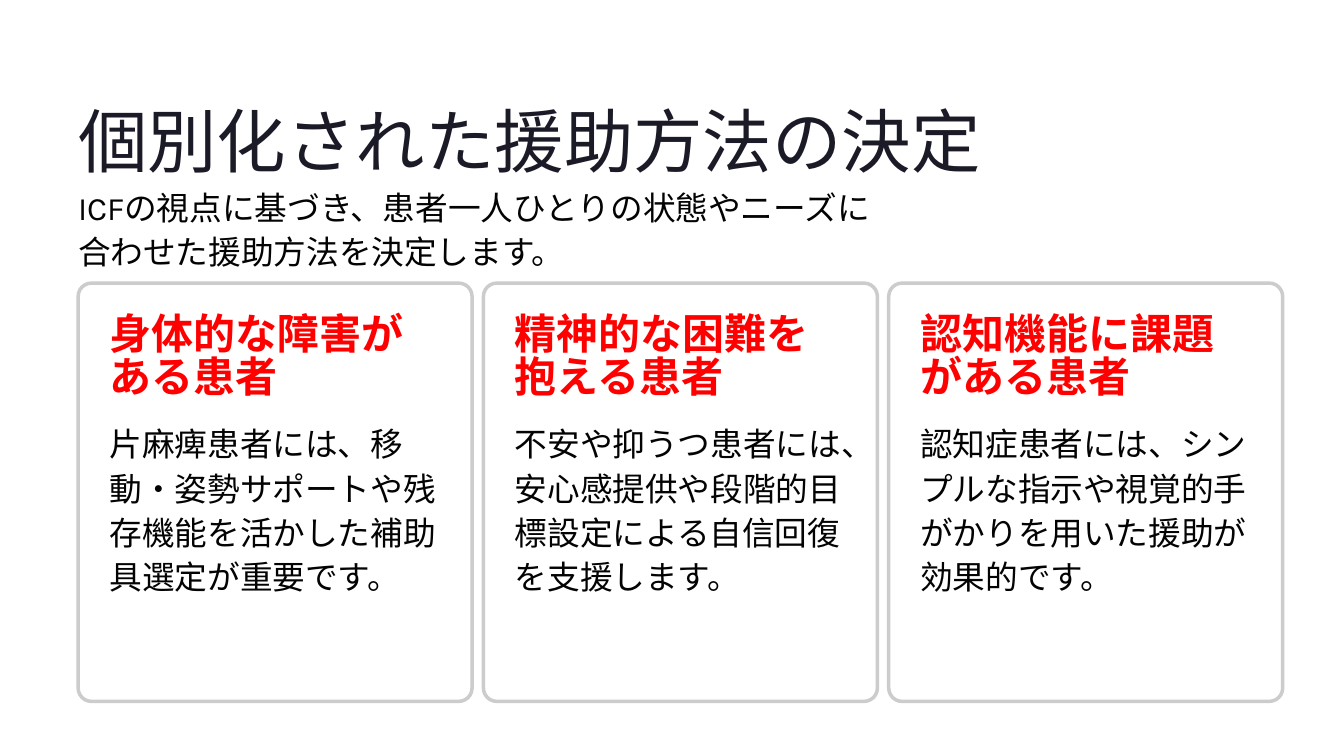
from pptx import Presentation
from pptx.dml.color import RGBColor
from pptx.enum.shapes import MSO_SHAPE
from pptx.enum.text import MSO_ANCHOR, MSO_AUTO_SIZE, PP_ALIGN
from pptx.oxml.ns import qn
from pptx.util import Inches, Pt
from lxml.etree import SubElement

TITLE = "個別化された援助方法の決定"
INTRO = ["ICFの視点に基づき、患者一人ひとりの状態やニーズに",
         "合わせた援助方法を決定します。"]
CARDS = [
    ("身体的な障害がある患者",
     "片麻痺患者には、移動・姿勢サポートや残存機能を活かした補助具選定が重要です。"),
    ("精神的な困難を抱える患者",
     "不安や抑うつ患者には、安心感提供や段階的目標設定による自信回復を支援します。"),
    ("認知機能に課題がある患者",
     "認知症患者には、シンプルな指示や視覚的手がかりを用いた援助が効果的です。"),
]

MARGIN = 0.93
CARD_TOP, CARD_WIDTH, CARD_HEIGHT = 3.37, 4.69, 4.98
COLUMN_STEP = 4.825
PADDING = 0.375
TEXT_WIDTH = 3.9
BODY_STYLE = dict(size=28, spacing=38, font="Karla", color="030303")
HEADING_STYLE = dict(size=36, spacing=37, font="Inter", color="FF0000", bold=True)


def rgb(value):
    return RGBColor.from_string(value)


def place(shape, left, top, width, height):
    shape.left, shape.top = Inches(left), Inches(top)
    shape.width, shape.height = Inches(width), Inches(height)


def write(shape, lines, size, spacing, font, color, bold=False, wrap=True):
    frame = shape.text_frame
    frame.margin_left = frame.margin_right = frame.margin_top = frame.margin_bottom = 0
    frame.auto_size = MSO_AUTO_SIZE.NONE
    frame.vertical_anchor = MSO_ANCHOR.TOP
    frame.word_wrap = wrap
    frame.text = "\n".join(lines)
    for paragraph in frame.paragraphs:
        paragraph.alignment = PP_ALIGN.LEFT
        paragraph.line_spacing = Pt(spacing)
        run_font = paragraph.runs[0].font
        run_font.name, run_font.size, run_font.bold = font, Pt(size), bold
        run_font.color.rgb = rgb(color)


def add_text(slide, box, lines, **style):
    write(slide.shapes.add_textbox(*map(Inches, box)), lines, **style)


def add_card(slide, left, heading, body):
    box = (left, CARD_TOP, CARD_WIDTH, CARD_HEIGHT)
    card = slide.shapes.add_shape(MSO_SHAPE.ROUNDED_RECTANGLE, *map(Inches, box))
    card.adjustments[0] = 0.034
    card.shadow.inherit = False
    card.fill.solid()
    card.fill.fore_color.rgb = rgb("FFFFFF")
    fill_color = card.fill._xPr.find(qn("a:solidFill"))[0]
    SubElement(fill_color, qn("a:alpha"), val="95000")
    card.line.color.rgb = rgb("CCCCCC")
    card.line.width = Pt(3)
    text_left = left + PADDING
    add_text(slide, (text_left, CARD_TOP + PADDING, TEXT_WIDTH, 1.26),
             [heading], **HEADING_STYLE)
    add_text(slide, (text_left, 4.99, TEXT_WIDTH, 2.57), [body], **BODY_STYLE)


def main():
    presentation = Presentation()
    presentation.slide_width, presentation.slide_height = Inches(16), Inches(9)
    slide = presentation.slides.add_slide(presentation.slide_layouts.get_by_name("Title Only"))
    title = slide.shapes.title
    place(title, MARGIN, 1.13, 10.83, 1.04)
    write(title, [TITLE], size=59.5, spacing=74.5, font="Inter", color="1B1B27", wrap=False)
    add_text(slide, (MARGIN, 2.17, 14.75, 0.64), INTRO, wrap=False, **BODY_STYLE)
    for column, (heading, body) in enumerate(CARDS):
        add_card(slide, MARGIN + column * COLUMN_STEP, heading, body)
    presentation.save("out.pptx")


if __name__ == "__main__":
    main()
